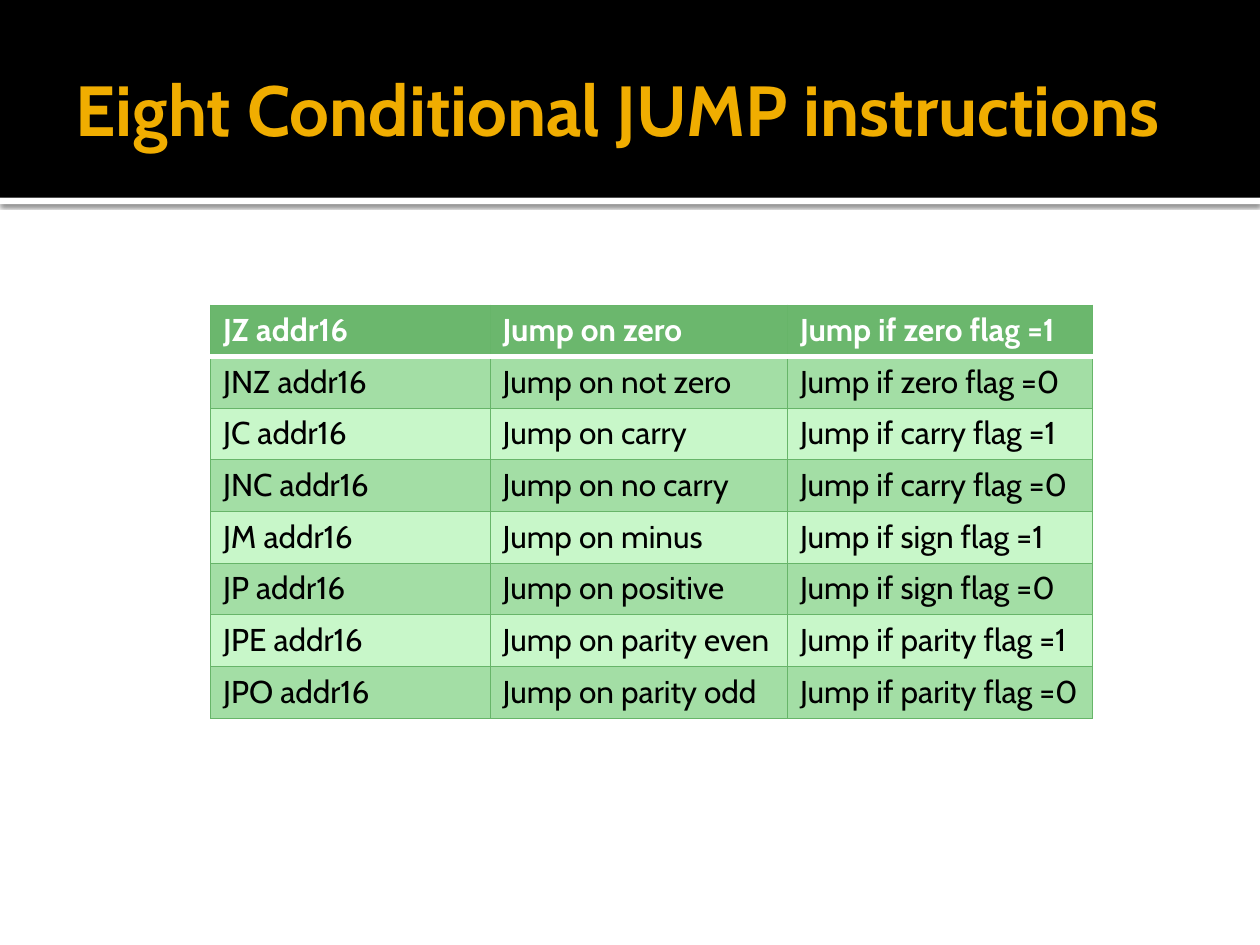
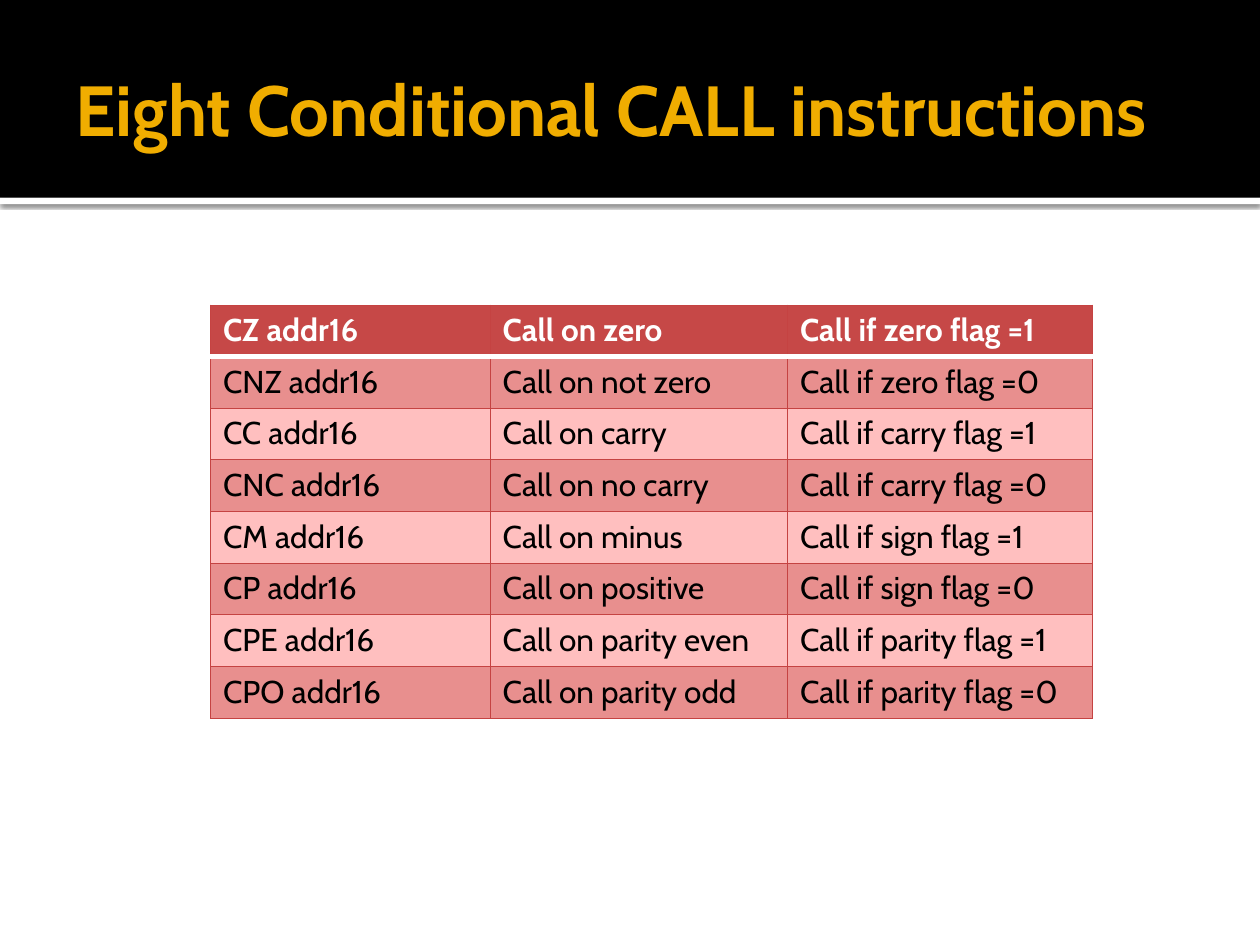
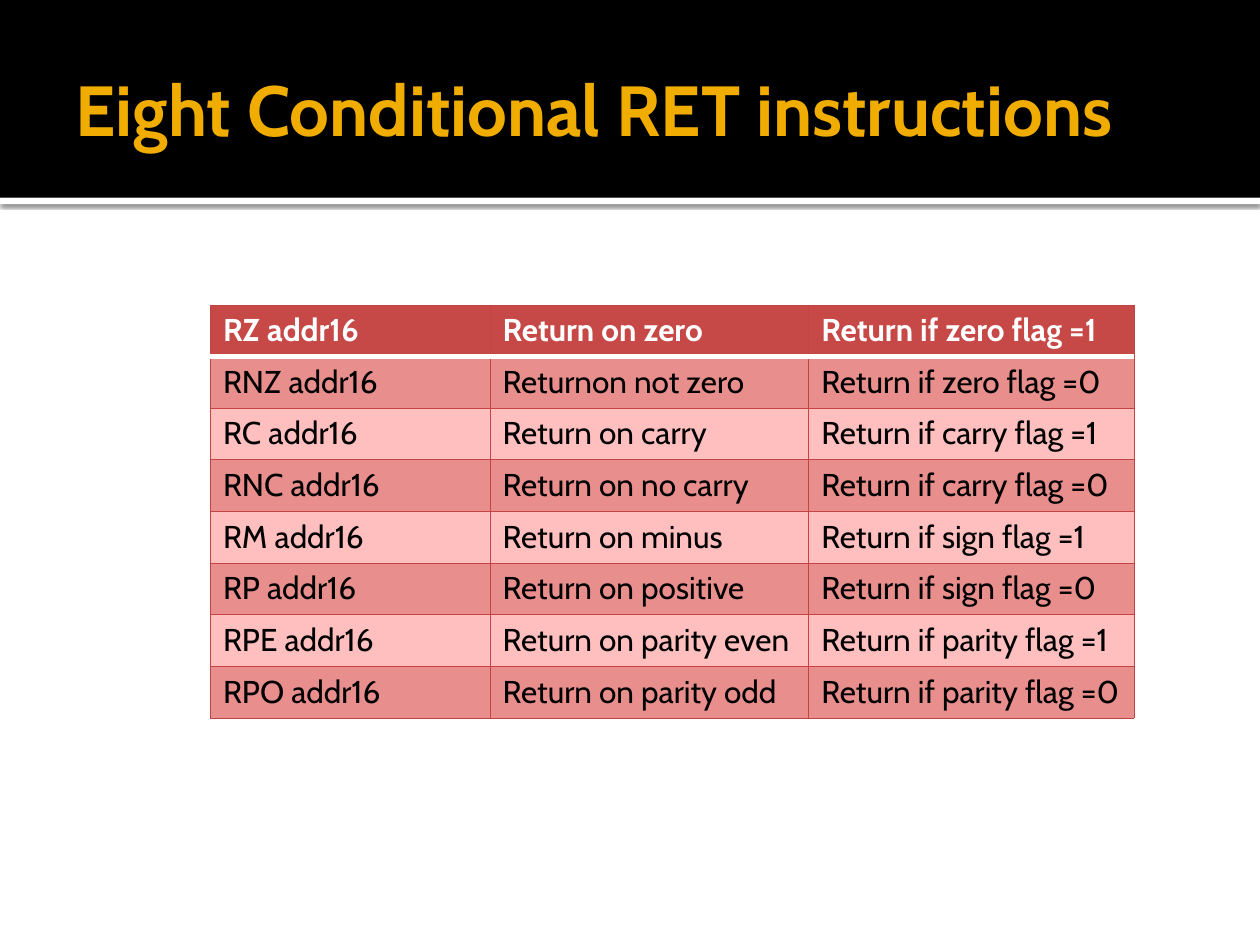
from dataclasses import dataclass

from lxml.etree import SubElement
from pptx import Presentation
from pptx.dml.color import RGBColor as Color
from pptx.enum.shapes import MSO_SHAPE as Preset
from pptx.enum.text import MSO_ANCHOR as Anchor
from pptx.oxml import parse_xml
from pptx.oxml.ns import nsdecls, qn
from pptx.util import Inches, Pt


@dataclass(frozen=True)
class Theme:
    font: str = "Cabin"
    title_size: float = 40.5
    cell_size: float = 18
    border_width: float = 0.5
    header_rule_width: float = 3.78
    black: str = "000000"
    white: str = "FFFFFF"
    gold: str = "F0AD00"


theme = Theme()
green = {"header": "6BB76D", "dark": "A3DEA5", "light": "C8F7C9", "border": "67B569"}
red = {"header": "C64847", "dark": "E88F8E", "light": "FFBFBF", "border": "C54342"}

# Mnemonic suffix, condition, flag tested, value of the flag
conditions = [
    ("Z", "zero", "zero", 1),
    ("NZ", "not zero", "zero", 0),
    ("C", "carry", "carry", 1),
    ("NC", "no carry", "carry", 0),
    ("M", "minus", "sign", 1),
    ("P", "positive", "sign", 0),
    ("PE", "parity even", "parity", 1),
    ("PO", "parity odd", "parity", 0),
]
special_wording = {"Return on not zero": "Returnon not zero"}

# Instruction, verb, palette, column widths
instruction_groups = [
    ("JUMP", "Jump", green, (2.22, 2.36, 2.42)),
    ("CALL", "Call", red, (2.22, 2.36, 2.42)),
    ("RET", "Return", red, (2.22, 2.53, 2.58)),
]
row_height = 0.41
bands = [(1.57, 0.05, theme.white), (0, 1.57, theme.black)]


def write(frame, text, size, color, bold):
    span = frame.paragraphs[0].add_run()
    span.text = text
    font_format = {"name": theme.font, "size": Pt(size), "bold": bold}
    for name, value in font_format.items():
        setattr(span.font, name, value)
    span.font.color.rgb = Color.from_string(color)


def set_borders(cell, borders):
    """Draw cell edges; borders maps L, R, T, B, in that order, to (colour, points)."""
    properties = cell._tc.get_or_add_tcPr()
    for position, (side, (color, width)) in enumerate(borders.items()):
        properties.insert(position, parse_xml(
            f'<a:ln{side} {nsdecls("a")} w="{Pt(width)}"><a:solidFill>'
            f'<a:srgbClr val="{color}"/></a:solidFill></a:ln{side}>'))


deck = Presentation()
deck.slide_width, deck.slide_height = Inches(10), Inches(7.5)

for instruction, verb, palette, widths in instruction_groups:
    page = deck.slides.add_slide(deck.slide_layouts[6])

    for top, height, color in bands:
        band = page.shapes.add_shape(
            Preset.RECTANGLE, 0, Inches(top), deck.slide_width, Inches(height))
        band.shadow.inherit = False
        band.fill.solid()
        band.fill.fore_color.rgb = Color.from_string(color)
        band.line.fill.background()
        if color == theme.white:
            effects = band._element.spPr.find(qn("a:effectLst"))
            shadow = SubElement(effects, qn("a:outerShdw"), blurRad=str(Pt(2.5)),
                                dist=str(Pt(0.8)), dir="5400000", rotWithShape="0")
            shade = SubElement(shadow, qn("a:srgbClr"), val=theme.black)
            SubElement(shade, qn("a:alpha"), val="60000")

    title = page.shapes.add_textbox(Inches(0.5), Inches(0.17), Inches(9), Inches(1.37))
    frame_format = {
        "word_wrap": True,
        "vertical_anchor": Anchor.MIDDLE,
        "margin_left": Inches(0.1),
        "margin_right": Inches(0.05),
        "margin_top": Inches(0.05),
        "margin_bottom": Inches(0.05),
    }
    for name, value in frame_format.items():
        setattr(title.text_frame, name, value)
    write(title.text_frame, f"Eight Conditional {instruction} instructions",
          theme.title_size, theme.gold, True)

    table = page.shapes.add_table(
        len(conditions), len(widths), Inches(1.67), Inches(2.42),
        Inches(sum(widths)), Inches(row_height * len(conditions))).table
    table.horz_banding = False
    for column, width in zip(table.columns, widths):
        column.width = Inches(width)

    thin = (palette["border"], theme.border_width)
    header_rule = (theme.white, theme.header_rule_width)
    for row, (suffix, condition, flag, value) in enumerate(conditions):
        is_header = row == 0
        fill = palette["header" if is_header else "dark" if row % 2 else "light"]
        text_color = theme.white if is_header else theme.black
        borders = {
            "L": thin,
            "R": thin,
            "T": header_rule if row == 1 else thin,
            "B": header_rule if is_header else thin,
        }
        meaning = f"{verb} on {condition}"
        texts = (
            f"{verb[0]}{suffix} addr16",
            special_wording.get(meaning, meaning),
            f"{verb} if {flag} flag ={value}",
        )
        for column, text in enumerate(texts):
            cell = table.cell(row, column)
            cell.fill.solid()
            cell.fill.fore_color.rgb = Color.from_string(fill)
            set_borders(cell, borders)
            write(cell.text_frame, text, theme.cell_size, text_color, is_header)

deck.save("out.pptx")
